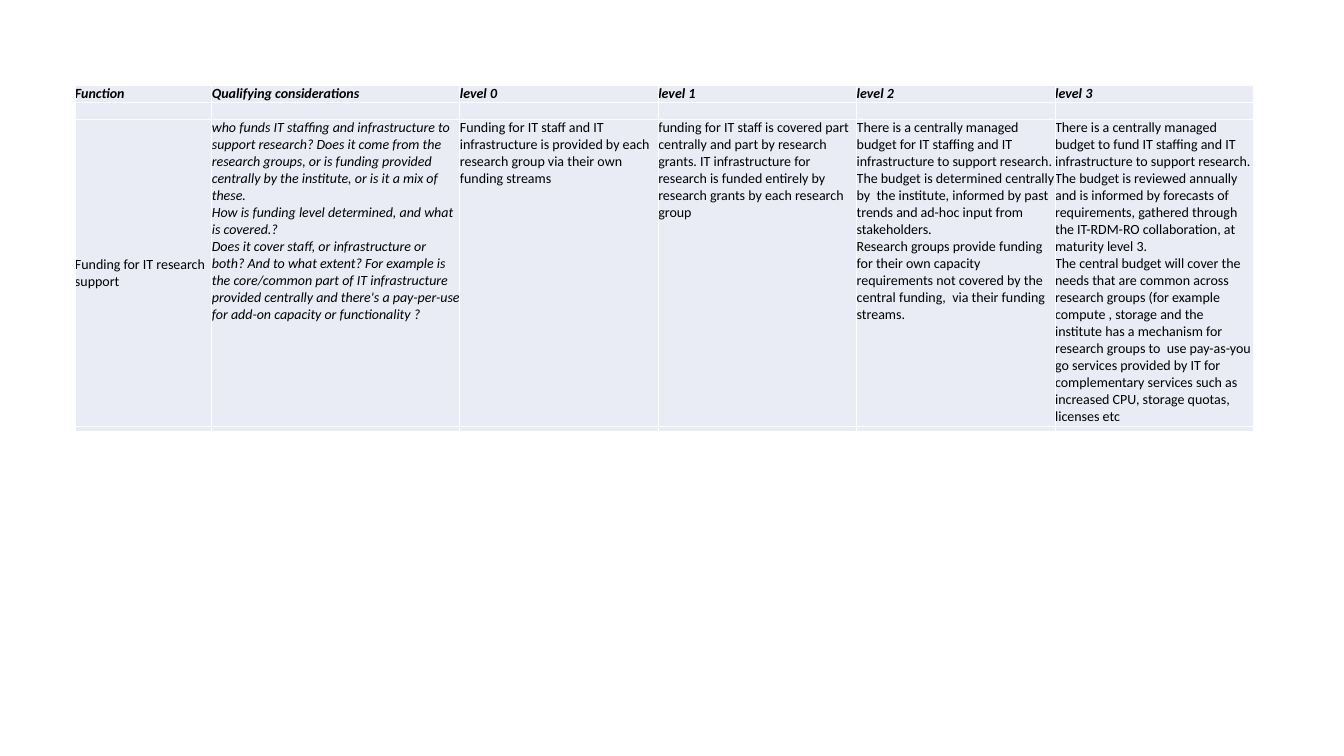
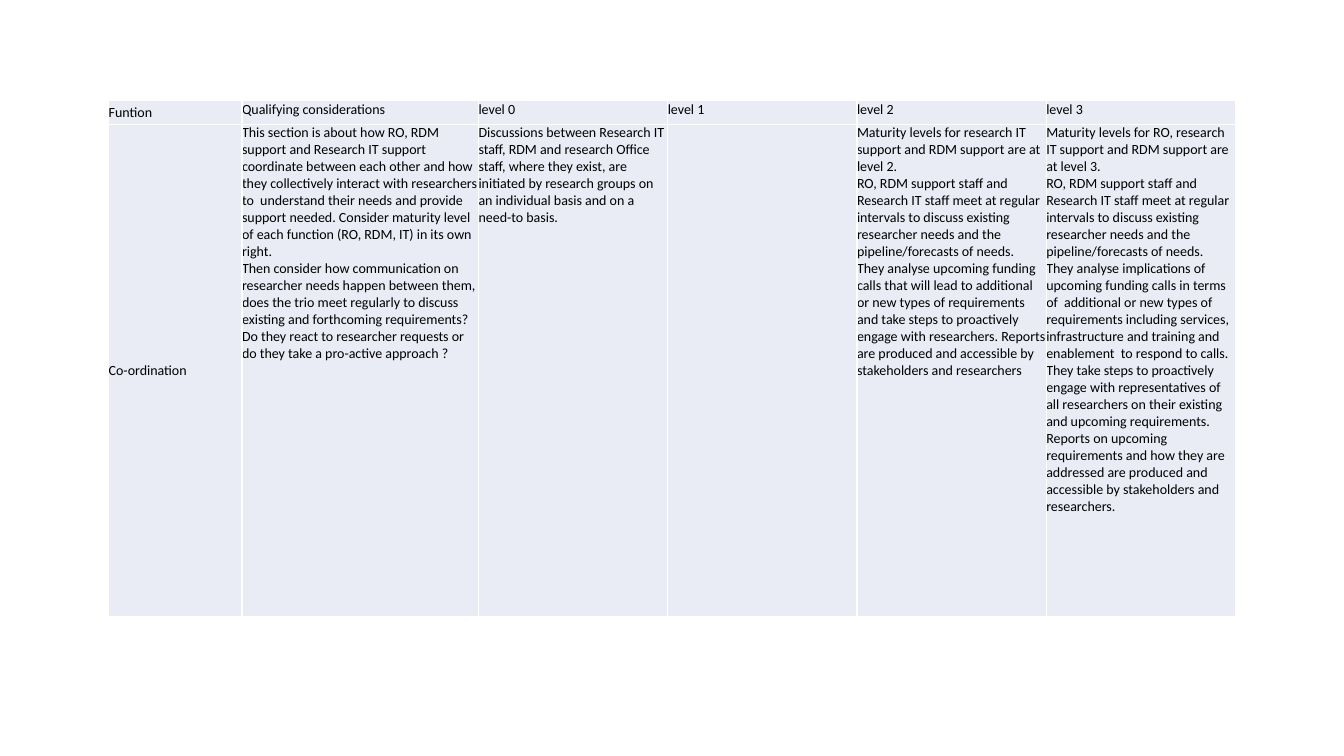
from lxml.etree import SubElement
from pptx import Presentation
from pptx.dml.color import RGBColor
from pptx.enum.text import MSO_ANCHOR
from pptx.oxml.ns import qn
from pptx.util import Cm, Pt

COLOURS = {"text": "000000", "cell": "E9EBF5", "border": "FFFFFF"}
FONT = "Calibri"
LEVELS = ["level 0", "level 1", "level 2", "level 3"]

FUNDING_ROWS = [
    ["Function", "Qualifying considerations", *LEVELS],
    [""] * 6,
    [
        "Funding for IT research support",
        "who funds IT staffing and infrastructure to support research? Does it come "
        "from the research groups, or is funding provided centrally by the institute, "
        "or is it a mix of these.\n"
        "How is funding level determined, and what is covered.?\n"
        "Does it cover staff, or infrastructure or both? And to what extent? For "
        "example is the core/common part of IT infrastructure provided centrally and "
        "there's a pay-per-use for add-on capacity or functionality ?",
        "Funding for IT staff and IT infrastructure is provided by each research group "
        "via their own funding streams",
        "funding for IT staff is covered part centrally and part by research grants. "
        "IT infrastructure for research is funded entirely by research grants by each "
        "research group",
        "There is a centrally managed budget for IT staffing and IT infrastructure to "
        "support research. The budget is determined centrally by  the institute, "
        "informed by past trends and ad-hoc input from stakeholders.\n"
        "Research groups provide funding for their own capacity requirements not "
        "covered by the central funding,  via their funding streams.",
        "There is a centrally managed budget to fund IT staffing and IT infrastructure "
        "to support research. The budget is reviewed annually and is informed by "
        "forecasts of requirements, gathered through the IT-RDM-RO collaboration, at "
        "maturity level 3.\n"
        "The central budget will cover the needs that are common across research "
        "groups (for example compute , storage and the institute has a mechanism for "
        "research groups to  use pay-as-you go services provided by IT for "
        "complementary services such as increased CPU, storage quotas, licenses etc",
    ],
    [""] * 6,
]

MEETINGS = (
    "RO, RDM support staff and Research IT staff meet at regular intervals to discuss "
    "existing researcher needs and the pipeline/forecasts of needs.\n"
)
COORDINATION_ROWS = [
    ["Funtion", "Qualifying considerations", *LEVELS],
    [
        "Co-ordination",
        "This section is about how RO, RDM support and Research IT support coordinate "
        "between each other and how they collectively interact with researchers to  "
        "understand their needs and provide support needed. Consider maturity level of "
        "each function (RO, RDM, IT) in its own right.\n"
        "Then consider how communication on researcher needs happen between them, does "
        "the trio meet regularly to discuss existing and forthcoming requirements? Do "
        "they react to researcher requests or do they take a pro-active approach ?",
        "Discussions between Research IT staff, RDM and research Office staff, where "
        "they exist, are initiated by research groups on an individual basis and on a "
        "need-to basis.",
        "",
        "Maturity levels for research IT support and RDM support are at level 2.\n"
        + MEETINGS
        + "They analyse upcoming funding calls that will lead to additional or new "
        "types of requirements and take steps to proactively engage with researchers. "
        "Reports are produced and accessible by stakeholders and researchers",
        "Maturity levels for RO, research IT support and RDM support are at level 3.\n"
        + MEETINGS
        + "They analyse implications of upcoming funding calls in terms of  additional "
        "or new types of requirements including services, infrastructure and training "
        "and enablement  to respond to calls.\n"
        "They take steps to proactively engage with representatives of all researchers "
        "on their existing and upcoming requirements.\n"
        "Reports on upcoming requirements and how they are addressed are produced and "
        "accessible by stakeholders and researchers.",
    ],
]


def add_borders(cell):
    """Draw a thin line on all four sides of a cell."""
    properties = cell._tc.get_or_add_tcPr()
    for side in ("lnL", "lnR", "lnT", "lnB"):
        line = SubElement(properties, qn(f"a:{side}"), w=str(Pt(1)))
        fill = SubElement(line, qn("a:solidFill"))
        SubElement(fill, qn("a:srgbClr"), val=COLOURS["border"])


def fill_cell(cell, text, anchor, bold, italic):
    """Write and format one cell without margins."""
    add_borders(cell)
    cell.fill.solid()
    cell.fill.fore_color.rgb = RGBColor.from_string(COLOURS["cell"])
    cell.margin_left = cell.margin_right = cell.margin_top = cell.margin_bottom = 0
    cell.vertical_anchor = anchor
    cell.text_frame.text = text
    for para in cell.text_frame.paragraphs:
        para.font.size = Pt(10 if text else 1)
        for span in para.runs:
            span.font.name = FONT
            span.font.size = Pt(10)
            span.font.bold = bold
            span.font.italic = italic
            span.font.color.rgb = RGBColor.from_string(COLOURS["text"])


def add_maturity_slide(deck, box, rows, widths, heights, emphasis=False):
    """Add a slide with a maturity table; emphasis slants headings and questions."""
    page = deck.slides.add_slide(deck.slide_layouts[6])
    left, top, width, height = (Cm(length) for length in box)
    frame = page.shapes.add_table(len(rows), len(widths), left, top, width, height)
    table = frame.table
    table.first_row = table.horz_banding = False
    for column, size in zip(table.columns, widths):
        column.width = Cm(size)
    for row, size in zip(table.rows, heights):
        row.height = Cm(size)
    for row_index, texts in enumerate(rows):
        for column_index, text in enumerate(texts):
            heading = row_index == 0
            anchor = MSO_ANCHOR.TOP if column_index else MSO_ANCHOR.MIDDLE
            fill_cell(
                table.cell(row_index, column_index),
                text,
                anchor,
                bold=emphasis and heading,
                italic=emphasis and (heading or column_index == 1),
            )


def main():
    """Build and save the deck."""
    deck = Presentation()
    deck.slide_width, deck.slide_height = Cm(33.87), Cm(19.05)
    add_maturity_slide(
        deck,
        (1.89, 2.15, 29.7, 8.72),
        FUNDING_ROWS,
        [3.45, 6.25] + [5] * 4,
        [0.43, 0.43, 7.74, 0.12],
        emphasis=True,
    )
    add_maturity_slide(
        deck,
        (2.74, 2.54, 28.4, 13),
        COORDINATION_ROWS,
        [3.36, 5.96] + [4.77] * 4,
        [0.6, 12.4],
    )
    deck.save("out.pptx")


if __name__ == "__main__":
    main()
